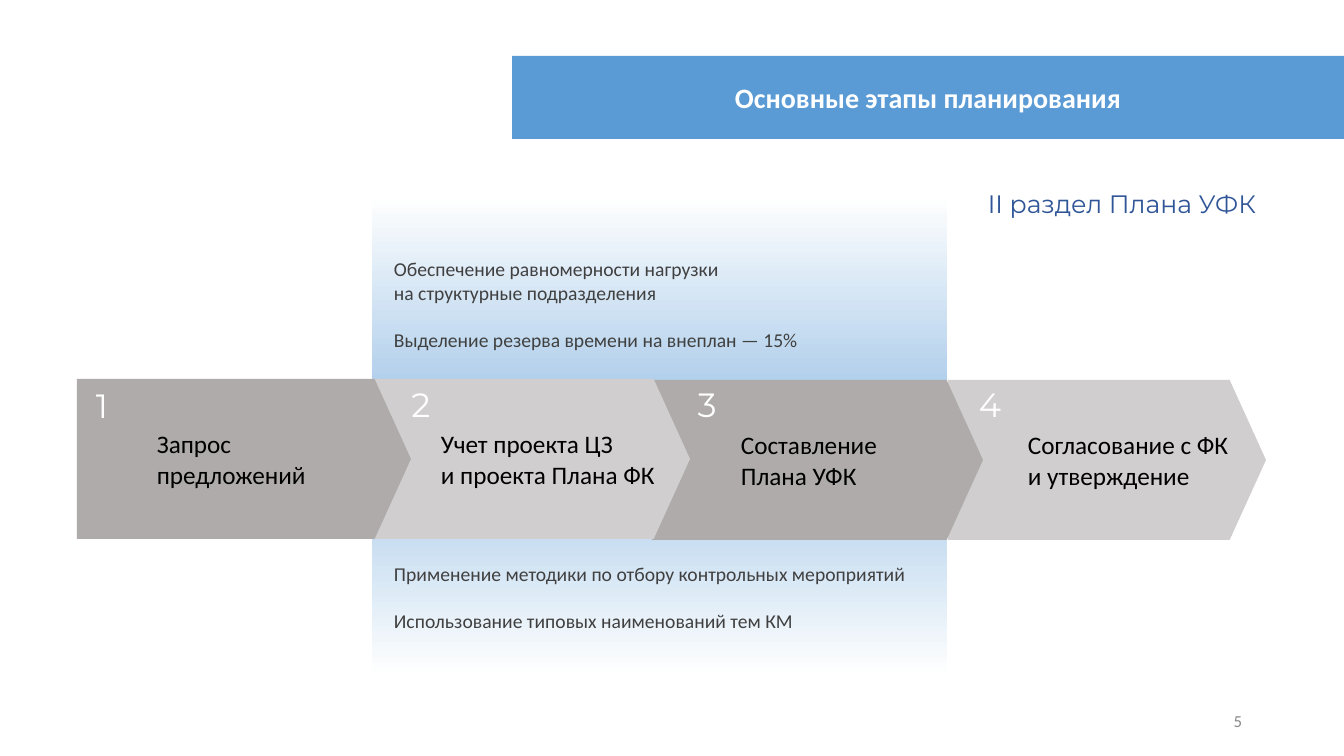
from lxml import etree
from pptx import Presentation, util as u
from pptx.dml.color import RGBColor
from pptx.enum import shapes, text
from pptx.oxml.ns import qn

PX = 914400 / 100.8
KIND = shapes.MSO_SHAPE
LEFT, MID, RIGHT = text.PP_ALIGN.LEFT, text.PP_ALIGN.CENTER, text.PP_ALIGN.RIGHT
TOP, CENTER = text.MSO_ANCHOR.TOP, text.MSO_ANCHOR.MIDDLE


def block(kind, box, color):
    item = slide.shapes.add_shape(kind, *[round(n * PX) for n in box])
    item.shadow.inherit = False
    item.line.fill.background()
    item.fill.solid()
    item.fill.fore_color.rgb = RGBColor.from_string(color)
    return item


def write(lines, size, color, item=None, box=None, face="Calibri",
          align=LEFT, anchor=TOP, bold=False, indent=0, gap=None):
    """Fill a shape, or a new text box; gap is the line with space before it."""
    if item is None:
        item = slide.shapes.add_textbox(*[round(n * PX) for n in box])
    frame = item.text_frame
    frame.text = lines
    frame.word_wrap = True
    frame.vertical_anchor = anchor
    for i, para in enumerate(frame.paragraphs):
        para.alignment = align
        if indent:
            props = para._p.get_or_add_pPr()
            props.set("marL", str(round(indent * PX)))
            props.set("indent", "0")
        if i == gap:
            para.space_before = u.Pt(17)
        for run in para.runs:
            run.font.name = face
            run.font.size = u.Pt(size)
            run.font.bold = bold
            run.font.color.rgb = RGBColor.from_string(color)


deck = Presentation()
deck.slide_width, deck.slide_height = round(1344 * PX), round(756 * PX)
slide = deck.slides.add_slide(deck.slide_layouts[6])

# Blue band fading to white at the top and bottom
band = block(KIND.RECTANGLE, (372, 194, 575, 483), "FFFFFF")
band.fill.gradient()
band.fill.gradient_angle = 270
stops = band._element.spPr.find(qn("a:gradFill")).find(qn("a:gsLst"))
for stop in list(stops):
    stops.remove(stop)
for pos, color in (0, "FFFFFF"), (49, "9DC3E6"), (100, "FFFFFF"):
    stop = etree.SubElement(stops, qn("a:gs"), pos=str(pos * 1000))
    etree.SubElement(stop, qn("a:srgbClr"), val=color)

# Title and section name
title = block(KIND.RECTANGLE, (512, 56, 832, 83), "5B9BD5")
write("Основные этапы планирования", 20, "FFFFFF", title,
      align=MID, anchor=CENTER, bold=True)
write("II раздел Плана УФК", 18, "2F5597", box=(978, 183, 336, 40),
      face="Montserrat")

# Notes above and below the steps
write("Обеспечение равномерности нагрузки\nна структурные подразделения\n"
      "Выделение резерва времени на внеплан — 15%", 14, "404040",
      box=(384, 252, 450, 105), gap=2)
write("Применение методики по отбору контрольных мероприятий\n"
      "Использование типовых наименований тем КМ", 14, "404040",
      box=(384, 557, 543, 82), gap=1)

# Steps, last one first so that each arrow overlaps the next
steps = [  # left, top, width, indent, number left, number top, label
    (77, 379, 334, 70, 54, 380, "Запрос\nпредложений"),
    (372, 379, 318, 59, 373, 379, "Учет проекта ЦЗ\nи проекта Плана ФК"),
    (652, 380, 331, 79, 659, 379, "Составление\nПлана УФК"),
    (948, 380, 318, 70, 942, 379, "Согласование с ФК\nи утверждение"),
]
for num in range(len(steps), 0, -1):
    x, y, wide, indent, numx, numy, label = steps[num - 1]
    arrow = block(KIND.PENTAGON, (x, y, wide, 160),
                  "AFABAB" if num % 2 else "D0CECE")
    arrow.adjustments[0] = 0.227
    write(label, 18, "000000", arrow, anchor=CENTER, indent=indent)
    write(str(num), 24, "FFFFFF", box=(numx, numy, 96, 50),
          face="Montserrat", align=MID)

# Page number
write("5", 12, "898989", box=(950, 701, 302, 40), align=RIGHT, anchor=CENTER)

deck.save("out.pptx")
